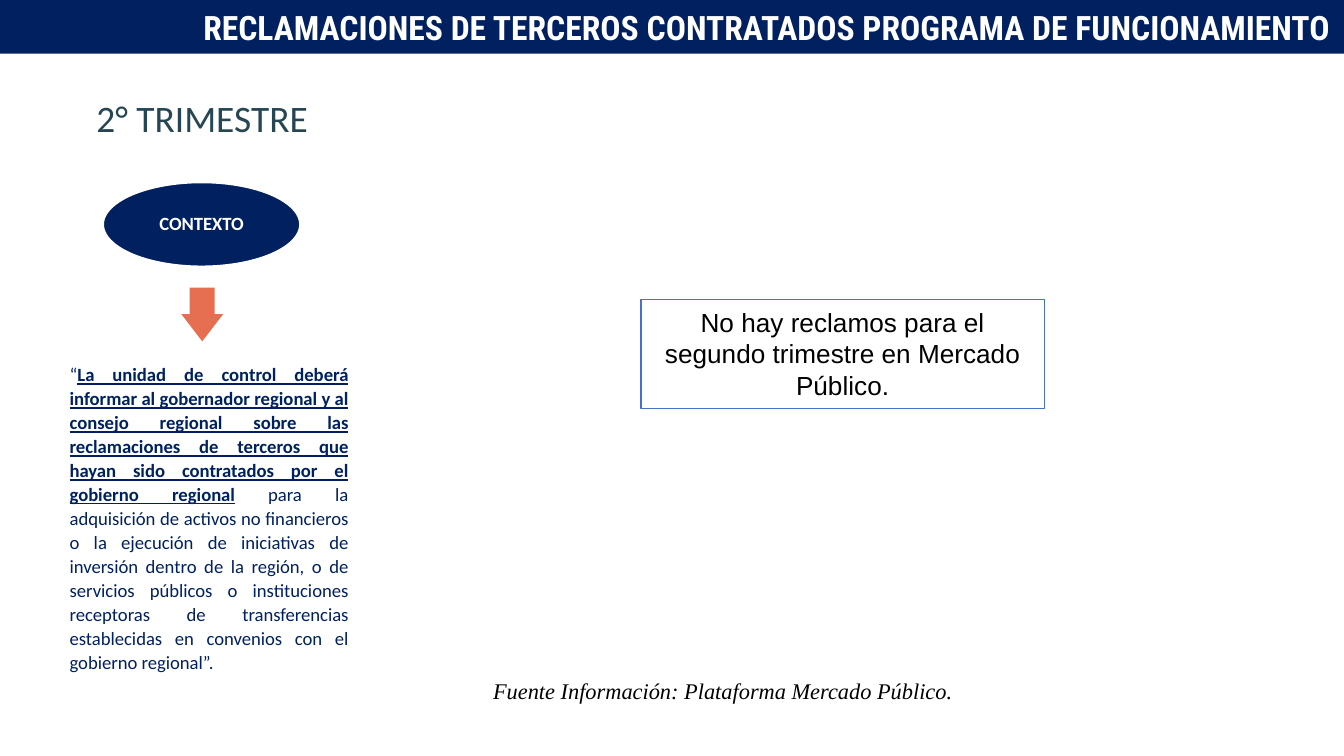
import pptx
import pptx.util
import pptx.dml.color
import pptx.enum.shapes
import pptx.enum.text

Inches = pptx.util.Inches
Kind = pptx.enum.shapes.MSO_SHAPE
Align = pptx.enum.text.PP_ALIGN
Anchor = pptx.enum.text.MSO_ANCHOR
NAVY = "002060"
WHITE = "FFFFFF"


def color(code):
    """Turn a hex string into a colour."""
    return pptx.dml.color.RGBColor.from_string(code)


def write(shape, *runs, size, font, tint, align=Align.LEFT, anchor=Anchor.TOP,
          bold=False, italic=False, space=1.0):
    """Write one paragraph; a run given as a tuple is bold and underlined."""
    frame = shape.text_frame
    frame.word_wrap = True
    frame.vertical_anchor = anchor
    par = frame.paragraphs[0]
    par.alignment = align
    par.line_spacing = space
    for part in runs:
        strong = isinstance(part, tuple)
        run = par.add_run()
        run.text = part[0] if strong else part
        run.font.size = pptx.util.Pt(size)
        run.font.name = font
        run.font.color.rgb = color(tint)
        run.font.bold = bold or strong
        run.font.italic = italic
        run.font.underline = strong


def box(slide, *place):
    """Add a text box at left, top, width, height in inches."""
    return slide.shapes.add_textbox(*map(Inches, place))


def form(slide, kind, *place, fill=None, line=None, width=1):
    """Add a preset shape with an optional fill and outline."""
    shape = slide.shapes.add_shape(kind, *map(Inches, place))
    shape.shadow.inherit = False
    if fill:
        shape.fill.solid()
        shape.fill.fore_color.rgb = color(fill)
    else:
        shape.fill.background()
    if line:
        shape.line.color.rgb = color(line)
        shape.line.width = pptx.util.Pt(width)
    else:
        shape.line.fill.background()
    return shape


def main():
    """Build the slide and save it."""
    deck = pptx.Presentation()
    deck.slide_width = Inches(10)
    deck.slide_height = deck.slide_width * 9 // 16
    slide = deck.slides.add_slide(deck.slide_layouts[6])

    title = form(slide, Kind.RECTANGLE, 0, 0, 10, 0.4, fill=NAVY)
    write(title, "RECLAMACIONES DE TERCEROS CONTRATADOS PROGRAMA DE FUNCIONAMIENTO",
          size=18, font="Roboto Condensed", tint=WHITE, bold=True,
          align=Align.RIGHT, anchor=Anchor.MIDDLE)

    write(box(slide, -0.13, 0.66, 3.27, 0.44), "2° TRIMESTRE",
          size=20, font="Calibri", tint="264653", align=Align.CENTER)

    arrow = form(slide, Kind.DOWN_ARROW, 1.35, 2.14, 0.31, 0.4, fill="E76F51")
    arrow.adjustments[0] = 0.6
    arrow.adjustments[1] = 0.65

    topic = form(slide, Kind.OVAL, 0.76, 1.35, 1.48, 0.64,
                 fill=NAVY, line=WHITE, width=2)
    write(topic, "CONTEXTO", size=10, font="Calibri", tint=WHITE, bold=True,
          align=Align.CENTER, anchor=Anchor.MIDDLE, space=0.9)

    write(box(slide, 0.42, 2.64, 2.27, 2.79), "“",
          ("La unidad de control deberá informar al gobernador regional y al "
           "consejo regional sobre las reclamaciones de terceros que hayan sido "
           "contratados por el gobierno regional",),
          " para la adquisición de activos no financieros o la ejecución de "
          "iniciativas de inversión dentro de la región, o de servicios públicos "
          "o instituciones receptoras de transferencias establecidas en convenios "
          "con el gobierno regional”.",
          size=10, font="Calibri", tint=NAVY, align=Align.JUSTIFY, space=1.07)

    write(box(slide, 3.57, 4.99, 5.02, 0.3),
          "Fuente Información: Plataforma Mercado Público.",
          size=12, font="Times New Roman", tint="000000", italic=True)

    notice = form(slide, Kind.RECTANGLE, 4.77, 2.23, 3, 0.81,
                  line="4472C4", width=0.75)
    write(notice, "No hay reclamos para el segundo trimestre en Mercado Público.",
          size=14, font="Arial", tint="000000", align=Align.CENTER)

    deck.save("out.pptx")


if __name__ == "__main__":
    main()
